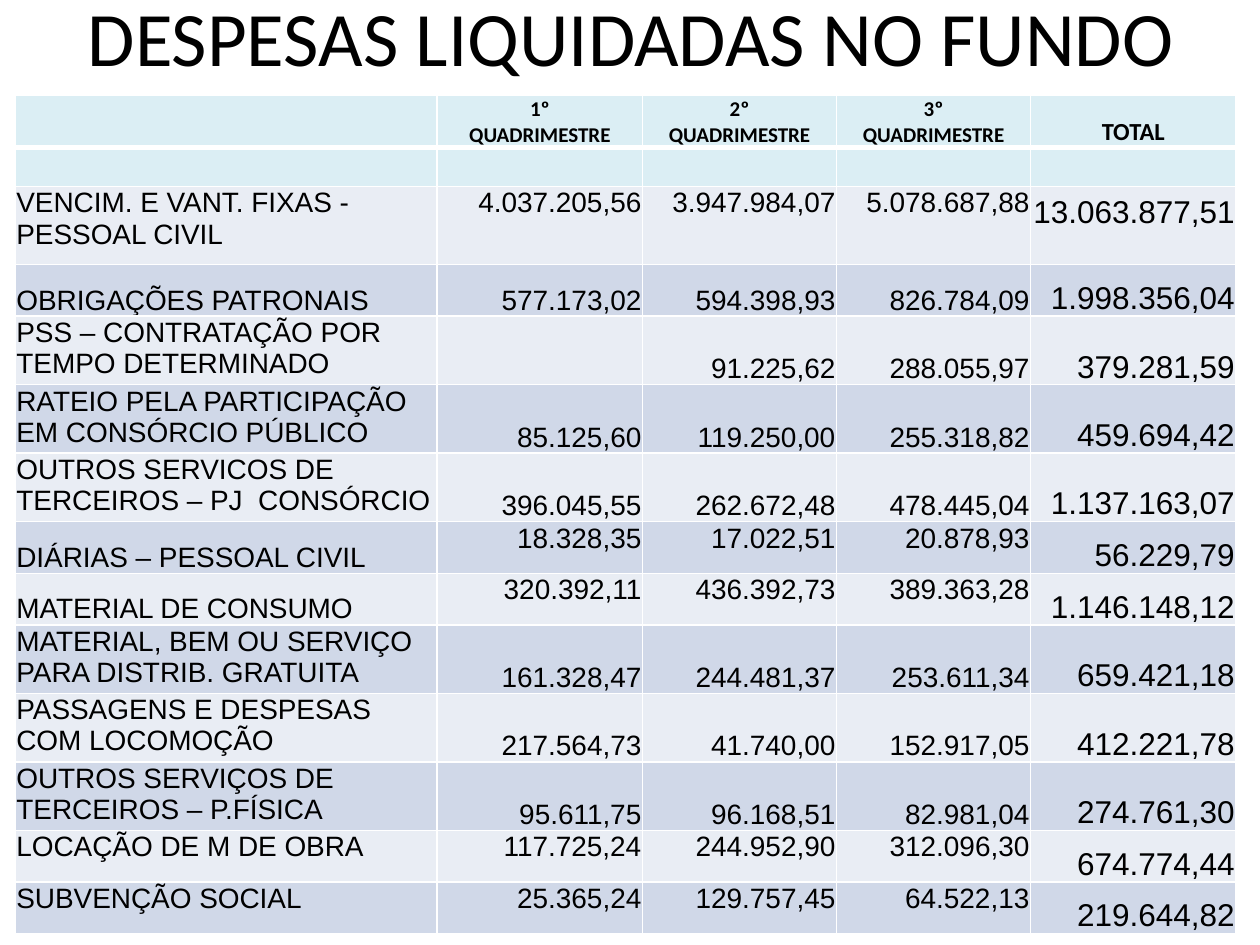
from lxml.etree import SubElement
from pptx import Presentation
from pptx.dml.color import RGBColor
from pptx.enum.text import MSO_ANCHOR, PP_ALIGN
from pptx.oxml.ns import qn
from pptx.util import Inches, Pt

TOP, BOTTOM = MSO_ANCHOR.TOP, MSO_ANCHOR.BOTTOM
BLACK, WHITE = "000000", "FFFFFF"
HEADER_FILL = "DBEEF4"
BAND_FILLS = ("E9EDF4", "D0D8E8")

COLUMN_WIDTHS = (3.35, 1.63, 1.54, 1.54, 1.63)
HEADER_HEIGHT, SPACER_HEIGHT = 0.41, 0.31
FIRST_ROW, ONE_LINE, TWO_LINES = 0.62, 0.41, 0.5

HEADINGS = ("", "1º\nQUADRIMESTRE", "2º\nQUADRIMESTRE", "3º\nQUADRIMESTRE", "TOTAL")

# height, label anchor, value anchor, label, three four-month values, total
EXPENSES = (
    (FIRST_ROW, TOP, TOP, "VENCIM. E VANT. FIXAS - PESSOAL CIVIL",
     "4.037.205,56", "3.947.984,07", "5.078.687,88", "13.063.877,51"),
    (ONE_LINE, BOTTOM, BOTTOM, "OBRIGAÇÕES PATRONAIS",
     "577.173,02", "594.398,93", "826.784,09", "1.998.356,04"),
    (TWO_LINES, TOP, BOTTOM, "PSS – CONTRATAÇÃO POR TEMPO DETERMINADO",
     "", "91.225,62", "288.055,97", "379.281,59"),
    (TWO_LINES, TOP, BOTTOM, "RATEIO PELA PARTICIPAÇÃO EM CONSÓRCIO PÚBLICO",
     "85.125,60", "119.250,00", "255.318,82", "459.694,42"),
    (TWO_LINES, TOP, BOTTOM, "OUTROS SERVICOS DE TERCEIROS – PJ  CONSÓRCIO",
     "396.045,55", "262.672,48", "478.445,04", "1.137.163,07"),
    (ONE_LINE, BOTTOM, TOP, "DIÁRIAS – PESSOAL CIVIL",
     "18.328,35", "17.022,51", "20.878,93", "56.229,79"),
    (ONE_LINE, BOTTOM, TOP, "MATERIAL DE CONSUMO",
     "320.392,11", "436.392,73", "389.363,28", "1.146.148,12"),
    (TWO_LINES, TOP, BOTTOM, "MATERIAL, BEM OU SERVIÇO PARA DISTRIB. GRATUITA",
     "161.328,47", "244.481,37", "253.611,34", "659.421,18"),
    (TWO_LINES, TOP, BOTTOM, "PASSAGENS E DESPESAS COM LOCOMOÇÃO",
     "217.564,73", "41.740,00", "152.917,05", "412.221,78"),
    (TWO_LINES, TOP, BOTTOM, "OUTROS SERVIÇOS DE TERCEIROS – P.FÍSICA",
     "95.611,75", "96.168,51", "82.981,04", "274.761,30"),
    (ONE_LINE, TOP, TOP, "LOCAÇÃO DE M DE OBRA",
     "117.725,24", "244.952,90", "312.096,30", "674.774,44"),
    (ONE_LINE, TOP, TOP, "SUBVENÇÃO SOCIAL",
     "25.365,24", "129.757,45", "64.522,13", "219.644,82"),
)


def color(hex_code):
    return RGBColor.from_string(hex_code)


def write(frame, text, size, font_name, align, bold=False):
    frame.text = text
    for paragraph in frame.paragraphs:
        paragraph.alignment = align
        font = paragraph.font
        font.size, font.name, font.bold = Pt(size), font_name, bold
        font.color.rgb = color(BLACK)


def add_title(slide, text):
    title = slide.shapes.add_textbox(Inches(0.51), Inches(-0.34), Inches(9), Inches(1.25))
    title.text_frame.word_wrap = True
    title.text_frame.vertical_anchor = MSO_ANCHOR.MIDDLE
    write(title.text_frame, text, 44, "Calibri", PP_ALIGN.CENTER)


def set_borders(cell, top=1, bottom=1):
    """Draw white lines on all four sides, with widths in points."""
    properties = cell._tc.get_or_add_tcPr()
    for side, width in (("L", 1), ("R", 1), ("T", top), ("B", bottom)):
        line = SubElement(properties, qn(f"a:ln{side}"), w=str(Pt(width)))
        fill = SubElement(line, qn("a:solidFill"))
        SubElement(fill, qn("a:srgbClr"), val=WHITE)


def style_cell(cell, fill, anchor=TOP, **border_widths):
    set_borders(cell, **border_widths)
    cell.fill.solid()
    cell.fill.fore_color.rgb = color(fill)
    cell.vertical_anchor = anchor
    cell.margin_left = cell.margin_right = cell.margin_top = Inches(0.01)
    cell.margin_bottom = 0


def fill_header(table):
    last = len(HEADINGS) - 1
    for column, heading in enumerate(HEADINGS):
        is_total = column == last
        cell = table.cell(0, column)
        style_cell(cell, HEADER_FILL, BOTTOM if is_total else TOP, bottom=3)
        write(cell.text_frame, heading, 14 if is_total else 12, "Calibri",
              PP_ALIGN.CENTER, bold=True)
        style_cell(table.cell(1, column), HEADER_FILL, top=3)


def fill_expense(table, row, expense):
    _, label_anchor, value_anchor, *texts = expense
    anchors = (label_anchor, *[value_anchor] * 3, BOTTOM)
    sizes = (16, 16, 16, 16, 18)
    for column, (text, anchor, size) in enumerate(zip(texts, anchors, sizes)):
        cell = table.cell(row, column)
        style_cell(cell, BAND_FILLS[row % 2], anchor)
        write(cell.text_frame, text, size, "Arial",
              PP_ALIGN.RIGHT if column else PP_ALIGN.LEFT)


def add_expense_table(slide):
    heights = (HEADER_HEIGHT, SPACER_HEIGHT, *[expense[0] for expense in EXPENSES])
    table = slide.shapes.add_table(
        len(heights), len(COLUMN_WIDTHS), Inches(0.12), Inches(0.76),
        Inches(sum(COLUMN_WIDTHS)), Inches(sum(heights))).table
    for column, width in zip(table.columns, COLUMN_WIDTHS):
        column.width = Inches(width)
    for row, height in zip(table.rows, heights):
        row.height = Inches(height)
    fill_header(table)
    for row, expense in enumerate(EXPENSES, start=2):
        fill_expense(table, row, expense)
    # The first total sits above the foot of its tall row.
    table.cell(2, len(COLUMN_WIDTHS) - 1).margin_bottom = Inches(0.27)


def main():
    presentation = Presentation()
    presentation.slide_width, presentation.slide_height = Inches(10), Inches(7.5)
    slide = presentation.slides.add_slide(presentation.slide_layouts[6])
    add_title(slide, "DESPESAS LIQUIDADAS NO FUNDO")
    add_expense_table(slide)
    presentation.save("out.pptx")


if __name__ == "__main__":
    main()
